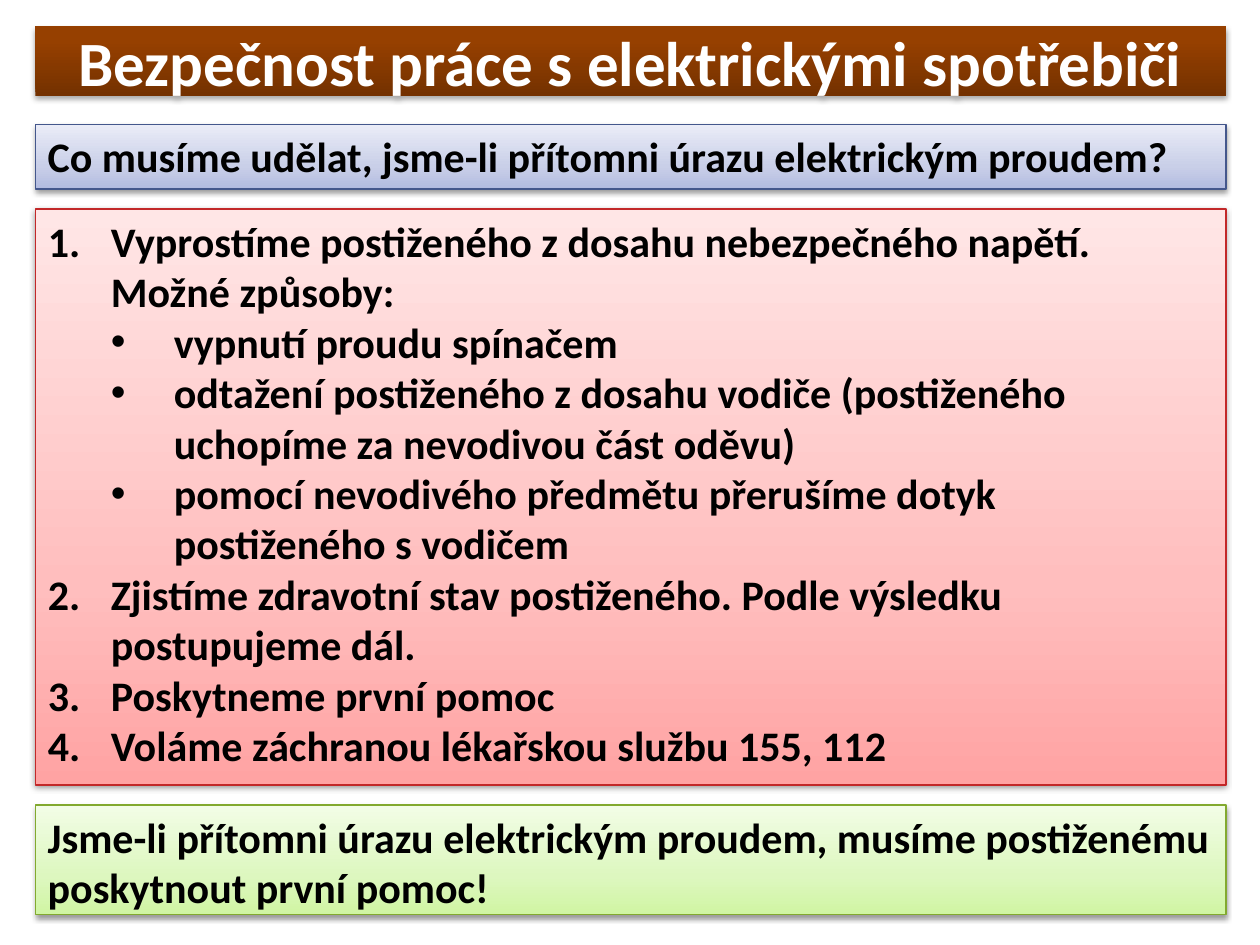
from lxml.etree import SubElement
from pptx import Presentation
from pptx.dml.color import RGBColor
from pptx.enum.text import MSO_ANCHOR, MSO_AUTO_SIZE, PP_ALIGN
from pptx.oxml.ns import qn
from pptx.util import Inches, Pt

HEX = {
    "brown": ["743100", "964000", "974100"],
    "blue": ["B2BBE0", "C9CFE8", "EAECF7"],
    "red": ["FFA3A3", "FFBEBE", "FFE6E6"],
    "green": ["D0F5A3", "DDF7BF", "F2FDE6"],
    "edge": {"blue": "44578C", "red": "C22829", "green": "82A92F"},
    "white": "FFFFFF",
    "black": "000000",
}
TITLE = "Bezpečnost práce s elektrickými spotřebiči"
ASK = "Co musíme udělat, jsme-li přítomni úrazu elektrickým proudem?"
STEPS = [
    (0, "Vyprostíme postiženého z dosahu nebezpečného napětí. Možné způsoby:"),
    (1, "vypnutí proudu spínačem"),
    (1, "odtažení postiženého z dosahu vodiče (postiženého uchopíme za nevodivou část oděvu)"),
    (1, "pomocí nevodivého předmětu přerušíme dotyk postiženého s vodičem"),
    (0, "Zjistíme zdravotní stav postiženého. Podle výsledku postupujeme dál."),
    (0, "Poskytneme první pomoc"),
    (0, "Voláme záchranou lékařskou službu 155, 112"),
]
MORAL = "Jsme-li přítomni úrazu elektrickým proudem, musíme postiženému poskytnout první pomoc!"
LEFT, WIDTH = 0.28, 9.45
HEAD = {"size": Pt(36), "name": "Calibri", "bold": True}
TEXT = {**HEAD, "size": Pt(24)}


def apply(item, form):
    for key, val in form.items():
        setattr(item, key, val)


def paint(shape, hue):
    fill = shape.fill
    fill.gradient()
    fill.gradient_angle = 90
    props = shape._element.spPr
    stops = props.find(qn("a:gradFill")).find(qn("a:gsLst"))
    for stop in list(stops):
        stops.remove(stop)
    mid = 80 if hue == "brown" else 35
    for pos, tint in zip((0, mid, 100), HEX[hue]):
        stop = SubElement(stops, qn("a:gs"), pos=str(pos * 1000))
        SubElement(stop, qn("a:srgbClr"), val=tint)
    if hue in HEX["edge"]:
        shape.line.color.rgb = RGBColor.from_string(HEX["edge"][hue])
        shape.line.width = Pt(0.75)
    else:
        shape.line.fill.background()
    dist, alpha = (1.8, 35) if hue == "brown" else (1.6, 38)
    glow = SubElement(props, qn("a:effectLst"))
    shade = SubElement(glow, qn("a:outerShdw"), blurRad=str(Pt(3.1)),
                       dist=str(Pt(dist)), dir="5400000", rotWithShape="0")
    tone = SubElement(shade, qn("a:srgbClr"), val=HEX["black"])
    SubElement(tone, qn("a:alpha"), val=str(alpha * 1000))


def mark(para, level):
    para.level = level
    props = para._p.get_or_add_pPr()
    props.set("marL", str(Inches(0.5 + 0.5 * level)))
    props.set("indent", str(Inches(-0.5)))
    SubElement(props, qn("a:buFont"), typeface="Arial" if level else "+mj-lt")
    if level:
        SubElement(props, qn("a:buChar"), char="•")
    else:
        SubElement(props, qn("a:buAutoNum"), type="arabicPeriod")


def panel(shape, top, high, hue, rows, form, ink, align, anchor):
    apply(shape, {"left": Inches(LEFT), "top": Inches(top),
                  "width": Inches(WIDTH), "height": Inches(high)})
    paint(shape, hue)
    frame = shape.text_frame
    apply(frame, {"word_wrap": True, "auto_size": MSO_AUTO_SIZE.NONE,
                  "vertical_anchor": anchor})
    for num, (level, text) in enumerate(rows):
        para = frame.add_paragraph() if num else frame.paragraphs[0]
        apply(para, {"alignment": align, "space_before": Pt(0)})
        if level is not None:
            mark(para, level)
        run = para.add_run()
        run.text = text
        apply(run.font, form)
        run.font.color.rgb = RGBColor.from_string(HEX[ink])


def main():
    deck = Presentation()
    apply(deck, {"slide_width": Inches(10), "slide_height": Inches(7.5)})
    slide = deck.slides.add_slide(deck.slide_layouts[1])
    title, body = slide.placeholders
    ask, moral = [slide.shapes.add_textbox(0, 0, 0, 0) for _ in range(2)]
    panel(title, 0.21, 0.55, "brown", [(None, TITLE)], HEAD, "white",
          PP_ALIGN.CENTER, MSO_ANCHOR.MIDDLE)
    for shape, top, high, hue, rows in [
        (ask, 0.99, 0.51, "blue", [(None, ASK)]),
        (body, 1.66, 4.57, "red", STEPS),
        (moral, 6.39, 0.87, "green", [(None, MORAL)]),
    ]:
        panel(shape, top, high, hue, rows, TEXT, "black",
              PP_ALIGN.LEFT, MSO_ANCHOR.TOP)
    deck.save("out.pptx")


if __name__ == "__main__":
    main()
